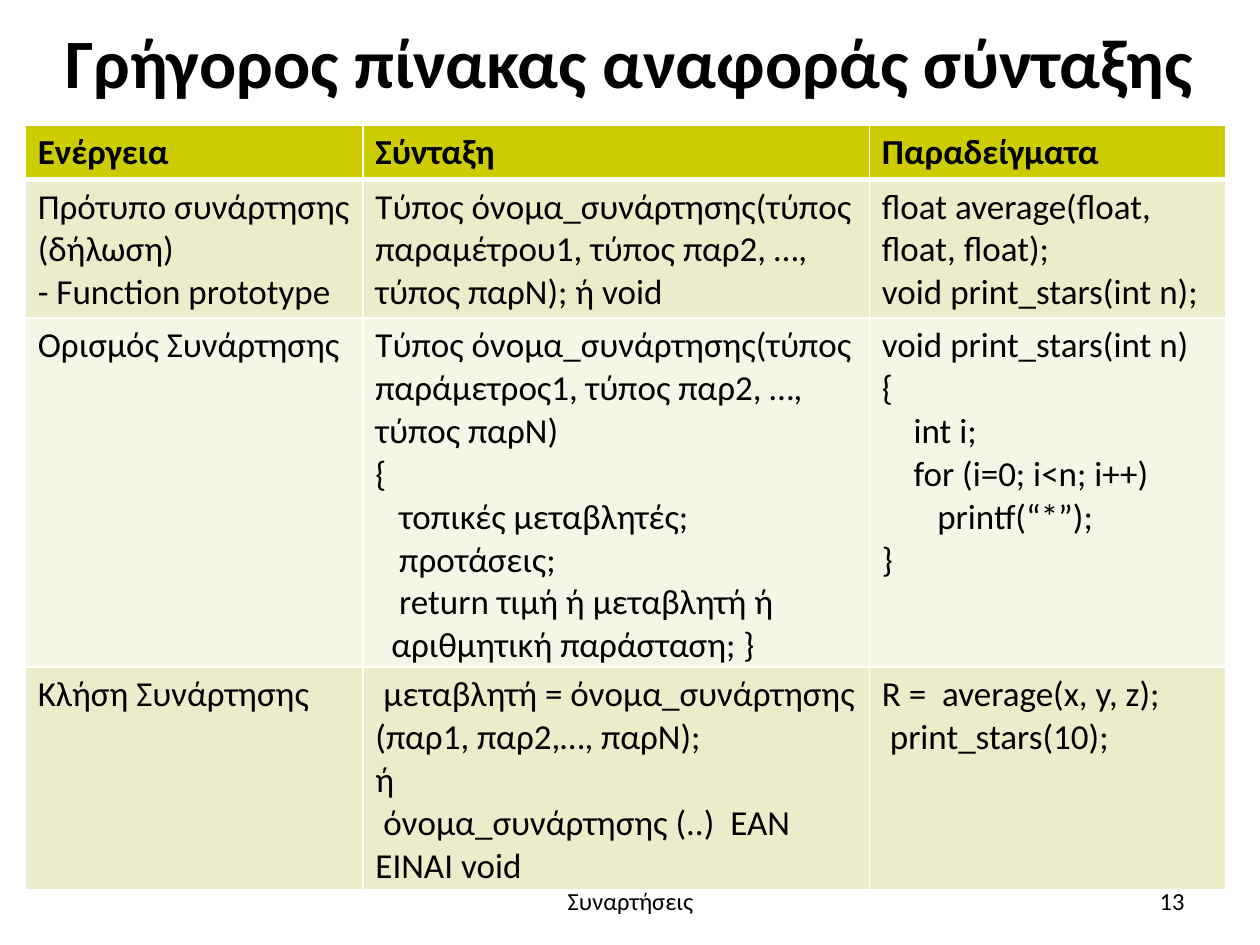
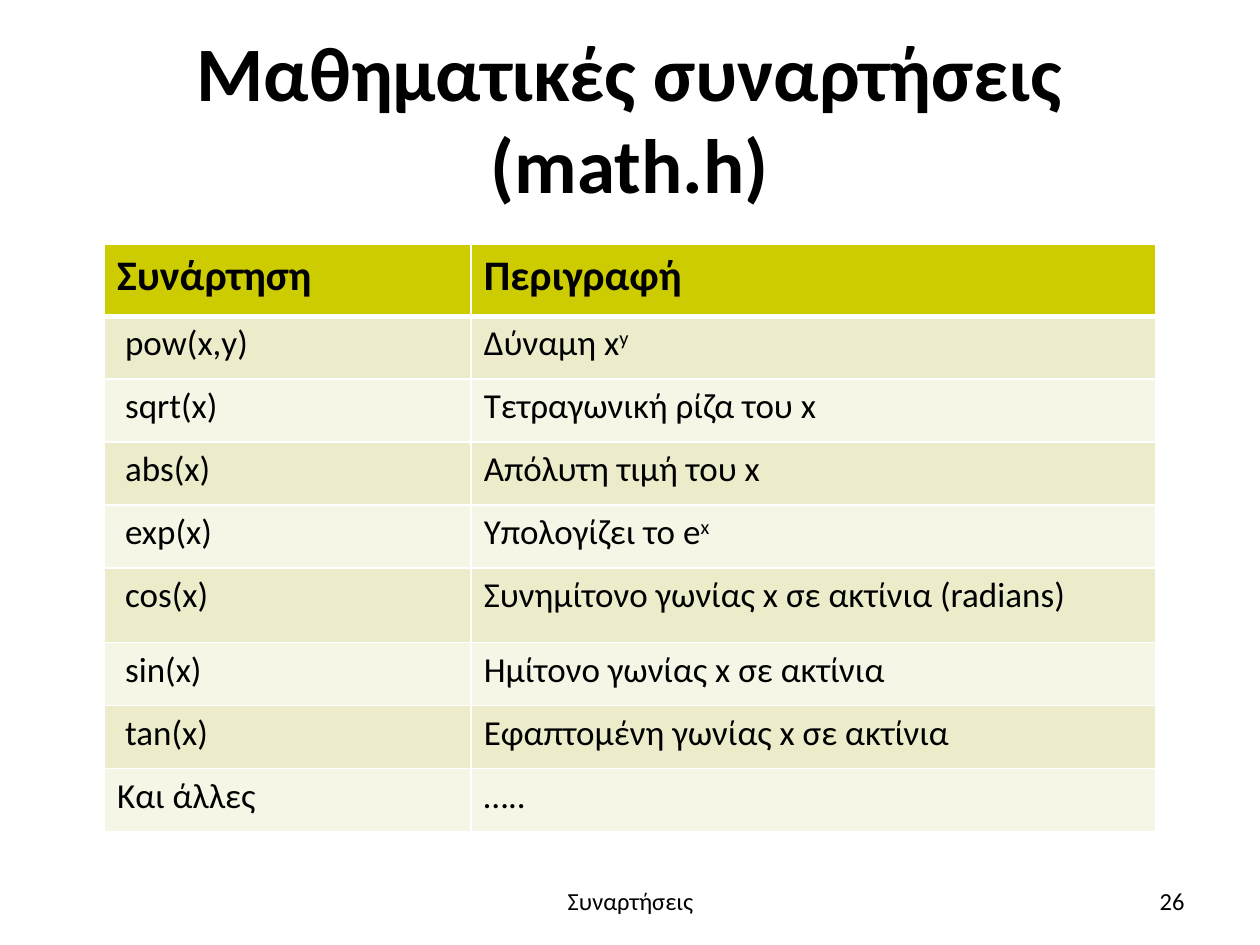
from lxml import etree
from pptx import Presentation
from pptx.dml.color import RGBColor
from pptx.enum.text import MSO_ANCHOR, PP_ALIGN
from pptx.oxml.ns import qn
from pptx.util import Inches, Pt

CENTER, RIGHT = PP_ALIGN.CENTER, PP_ALIGN.RIGHT
MIDDLE = MSO_ANCHOR.MIDDLE
FONT = "Calibri"
COLORS = {"text": "000000", "line": "FFFFFF", "header": "CCCC00",
          "odd": "ECECCB", "even": "F6F6E7"}
FOOTER = "Συναρτήσεις"

SYNTAX_ROWS = [
    ["Ενέργεια", "Σύνταξη", "Παραδείγματα"],
    ["Πρότυπο συνάρτησης (δήλωση)\n- Function prototype",
     "Τύπος όνομα_συνάρτησης(τύπος παραμέτρου1, τύπος παρ2, …, τύπος παρN); ή void",
     "float average(float, float, float);\nvoid print_stars(int n);"],
    ["Ορισμός Συνάρτησης",
     "Τύπος όνομα_συνάρτησης(τύπος παράμετρος1, τύπος παρ2, …, τύπος παρN)\n"
     "{\n"
     "   τοπικές μεταβλητές;\n"
     "   προτάσεις;\n"
     "   return τιμή ή μεταβλητή ή\n"
     "  αριθμητική παράσταση; }",
     "void print_stars(int n)\n"
     "{\n"
     "    int i;\n"
     "    for (i=0; i<n; i++)\n"
     "       printf(“*”);\n"
     "}"],
    ["Κλήση Συνάρτησης",
     " μεταβλητή = όνομα_συνάρτησης (παρ1, παρ2,…, παρN);\n"
     "ή\n"
     " όνομα_συνάρτησης (..)  ΕΑΝ ΕΊΝΑΙ void",
     "R =  average(x, y, z);\n print_stars(10);"],
]

MATH_ROWS = [
    ["Συνάρτηση", "Περιγραφή"],
    [" pow(x,y)", "Δύναμη x^y"],
    [" sqrt(x)", "Τετραγωνική ρίζα του x"],
    [" abs(x)", "Απόλυτη τιμή του x"],
    [" exp(x)", "Υπολογίζει το e^x"],
    [" cos(x)", "Συνημίτονο γωνίας x σε ακτίνια (radians)"],
    [" sin(x)", "Ημίτονο γωνίας x σε ακτίνια"],
    [" tan(x)", "Εφαπτομένη γωνίας x σε ακτίνια"],
    ["Και άλλες", "….."],
]


def style_run(r, size, bold):
    """Give a run the shared font."""
    r.font.name = FONT
    r.font.size = Pt(size)
    r.font.bold = bold
    r.font.color.rgb = RGBColor.from_string(COLORS["text"])


def add_text(s, box, text, size, align, bold=False):
    """Add a vertically centred line of text in a box."""
    tf = s.shapes.add_textbox(*map(Inches, box)).text_frame
    tf.word_wrap = True
    tf.vertical_anchor = MIDDLE
    tf.text = text
    p = tf.paragraphs[0]
    p.alignment = align
    style_run(p.runs[0], size, bold)


def add_border(cell, side, width):
    """Draw one solid edge of a table cell."""
    ln = etree.SubElement(cell._tc.get_or_add_tcPr(), qn(f"a:ln{side}"), w=str(Pt(width)))
    fill = etree.SubElement(ln, qn("a:solidFill"))
    etree.SubElement(fill, qn("a:srgbClr"), val=COLORS["line"])


def fill_cell(cell, text, row, size):
    """Write and colour a cell; a caret starts a superscript."""
    for side in "LRTB":
        thick = (row, side) in ((0, "B"), (1, "T"))
        add_border(cell, side, 3 if thick else 1)
    cell.fill.solid()
    band = "header" if row == 0 else "odd" if row % 2 else "even"
    cell.fill.fore_color.rgb = RGBColor.from_string(COLORS[band])
    base, _, power = text.partition("^")
    tf = cell.text_frame
    tf.text = base
    if power:
        r = tf.paragraphs[0].add_run()
        r.text = power
        r.font._element.set("baseline", "30000")
    for p in tf.paragraphs:
        for r in p.runs:
            style_run(r, size, row == 0)


def add_grid(s, box, rows, widths, heights, header_size):
    """Add a banded table with a strong header row."""
    table = s.shapes.add_table(len(rows), len(widths), *map(Inches, box)).table
    for column, width in zip(table.columns, widths):
        column.width = Inches(width)
    for i, (values, height) in enumerate(zip(rows, heights)):
        table.rows[i].height = Inches(height)
        for j, text in enumerate(values):
            fill_cell(table.cell(i, j), text, i, 20 if i else header_size)


def add_table_slide(prs, title, title_box, title_size, number, **grid):
    """Add a slide with title, table, footer and page number."""
    s = prs.slides.add_slide(prs.slide_layouts[6])
    add_text(s, title_box, title, title_size, CENTER, bold=True)
    add_grid(s, **grid)
    add_text(s, (3.42, 6.95, 3.17, 0.4), FOOTER, 14, CENTER)
    add_text(s, (7.17, 6.95, 2.33, 0.4), str(number), 14, RIGHT)


def main():
    """Build both slides and save the file."""
    prs = Presentation()
    prs.slide_width, prs.slide_height = Inches(10), Inches(7.5)
    add_table_slide(prs, "Γρήγορος πίνακας αναφοράς σύνταξης",
                    (0.35, 0.13, 9.29, 0.71), 39.6, 13,
                    box=(0.2, 0.99, 9.53, 6.07), rows=SYNTAX_ROWS,
                    widths=(2.68, 4.02, 2.83), heights=(0.38, 1.06, 2.72, 1.69),
                    header_size=20)
    add_table_slide(prs, "Μαθηματικές συναρτήσεις (math.h)",
                    (0.5, 0.3, 9, 1.25), 44, 26,
                    box=(0.83, 1.94, 8.35, 4.64), rows=MATH_ROWS,
                    widths=(2.91, 5.43), heights=[0.57] + [0.5] * 4 + [0.59] + [0.5] * 3,
                    header_size=24)
    prs.save("out.pptx")


if __name__ == "__main__":
    main()
